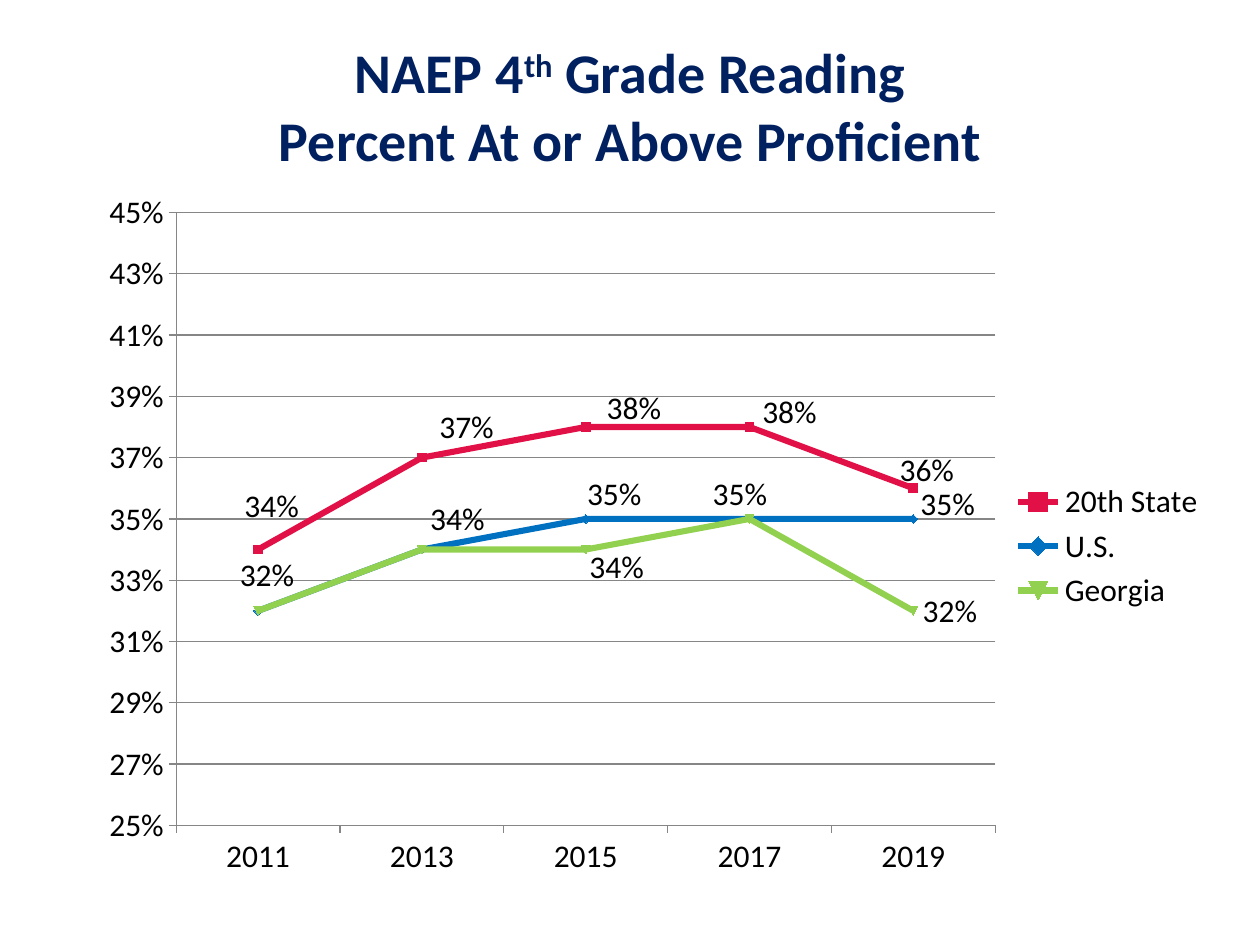
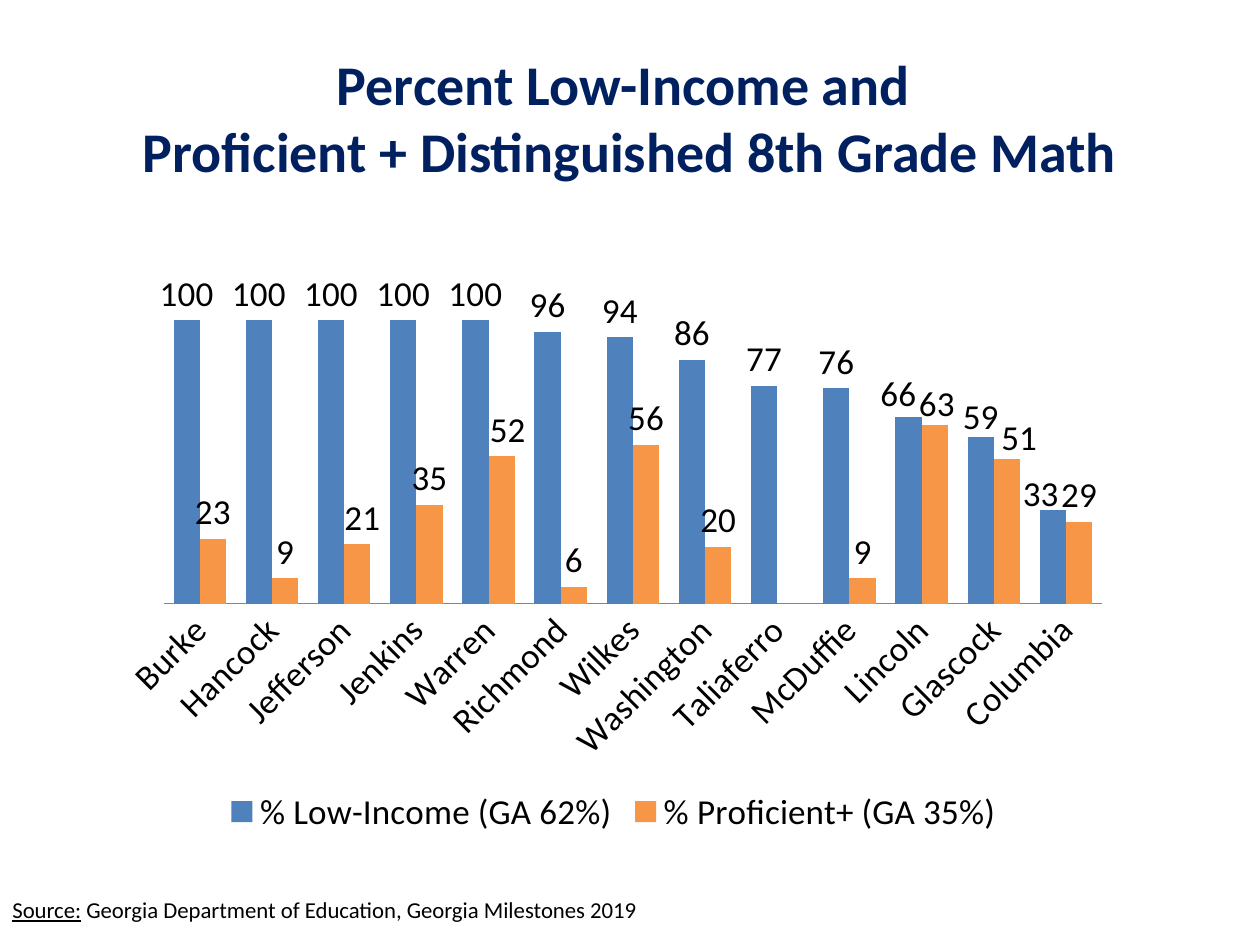
from lxml import etree
from pptx import Presentation
from pptx.chart.data import CategoryChartData
from pptx.dml.color import RGBColor
from pptx.enum.chart import (XL_CHART_TYPE, XL_LABEL_POSITION, XL_LEGEND_POSITION,
                             XL_MARKER_STYLE, XL_TICK_MARK)
from pptx.enum.text import MSO_ANCHOR, PP_ALIGN
from pptx.oxml.ns import qn
from pptx.util import Cm, Pt

NAVY = RGBColor(0x00, 0x20, 0x60)
BLACK = RGBColor(0x00, 0x00, 0x00)
GRAY = RGBColor(0x86, 0x86, 0x86)
CRIMSON = RGBColor(0xE1, 0x11, 0x48)
AZURE = RGBColor(0x00, 0x70, 0xC0)
LIME = RGBColor(0x92, 0xD0, 0x50)
BLUE = RGBColor(0x4F, 0x81, 0xBD)
ORANGE = RGBColor(0xF7, 0x96, 0x46)

LINE, COLUMN = XL_CHART_TYPE.LINE_MARKERS, XL_CHART_TYPE.COLUMN_CLUSTERED
RIGHT_OF_POINT, ABOVE_BAR = XL_LABEL_POSITION.RIGHT, XL_LABEL_POSITION.OUTSIDE_END
LEGEND_RIGHT, LEGEND_BOTTOM = XL_LEGEND_POSITION.RIGHT, XL_LEGEND_POSITION.BOTTOM
AUTO_MARKER = XL_MARKER_STYLE.AUTOMATIC
TICK_OUT, TICK_NONE = XL_TICK_MARK.OUTSIDE, XL_TICK_MARK.NONE
TOP, MIDDLE = MSO_ANCHOR.TOP, MSO_ANCHOR.MIDDLE
LEFT, CENTER = PP_ALIGN.LEFT, PP_ALIGN.CENTER

FONT = "Calibri"
TITLE = {"size": Pt(32), "bold": True, "name": FONT}
SOURCE = {"size": Pt(13), "name": FONT}
HIDDEN = "hidden"
BREAK = ("\n", {}, 0)


def add_text(slide, box, lines, style, color, align, anchor=TOP):
    """Each line is a list of (text, extra font values, baseline in percent)."""
    frame = slide.shapes.add_textbox(*map(Cm, box)).text_frame
    frame.word_wrap = True
    frame.vertical_anchor = anchor
    for number, line in enumerate(lines):
        paragraph = frame.paragraphs[0] if number == 0 else frame.add_paragraph()
        paragraph.alignment = align
        for part in line:
            if part == BREAK:
                paragraph.add_line_break()
                continue
            text, extra, baseline = part
            run = paragraph.add_run()
            run.text = text
            run.font.color.rgb = color
            for name, value in {**style, **extra}.items():
                setattr(run.font, name, value)
            if baseline:
                run._r.get_or_add_rPr().set("baseline", str(baseline * 1000))
    return frame


def add_layout(parent, index, **values):
    """Insert a manual chart layout; values are fractions of the chart."""
    for old in parent.findall(qn("c:layout")):
        parent.remove(old)
    layout = etree.Element(qn("c:layout"))
    parent.insert(index, layout)
    manual = etree.SubElement(layout, qn("c:manualLayout"))
    for name, value in values.items():
        etree.SubElement(manual, qn("c:" + name)).set("val", str(value))


prs = Presentation()
prs.slide_width, prs.slide_height = Cm(25.4), Cm(19.05)
blank = prs.slide_layouts[6]
reading_slide = prs.slides.add_slide(blank)
math_slide = prs.slides.add_slide(blank)

# Titles
add_text(reading_slide, (0.64, 0.64, 24.13, 3),
         [[("NAEP 4", {}, 0), ("th", {}, 30), (" Grade Reading", {}, 0)],
          [("Percent At or Above Proficient", {}, 0)]],
         TITLE, NAVY, CENTER)
add_text(math_slide, (1.27, 0.76, 22.86, 3.18),
         [[("Percent Low-Income and ", {}, 0), BREAK,
           ("Proficient + Distinguished 8th Grade Math", {}, 0)]],
         TITLE, NAVY, CENTER, MIDDLE)

# Source line
source = add_text(math_slide, (0, 18.13, 22.23, 0.64),
                  [[("Source:", {"underline": True}, 0),
                    (" Georgia Department of Education, Georgia Milestones 2019", {}, 0)]],
                  SOURCE, BLACK, LEFT)
source.paragraphs[0].line_spacing = 0.6

# Chart data: series are (name, colour, values, label shifts in percent by point)
reading = {
    "slide": reading_slide, "type": LINE, "box": (1.27, 3.81, 23.29, 14.4),
    "size": Pt(18), "format": "0%", "legend": LEGEND_RIGHT, "label": RIGHT_OF_POINT,
    "plot": {"x": 0.098, "y": 0.033, "w": 0.709, "h": 0.858},
    "categories": ["2011", "2013", "2015", "2017", "2019"],
    "series": [
        ("20th State", CRIMSON, (0.34, 0.37, 0.38, 0.38, 0.36),
         {0: (-2, -6), 1: (0.7, -4.2), 2: (1, -2.6), 3: (0.3, -2.1), 4: (-2, -2.5)}),
        ("U.S.", AZURE, (0.32, 0.34, 0.35, 0.35, 0.35),
         {0: (-2.4, -5), 1: (-0.1, -4.2), 2: (-0.7, -3.4), 3: (-4, -3.4), 4: (-0.2, -2)}),
        ("Georgia", LIME, (0.32, 0.34, 0.34, 0.35, 0.32),
         {0: HIDDEN, 1: HIDDEN, 2: (-0.5, 2.5), 3: HIDDEN}),
    ],
    "value_axis": {"minimum_scale": 0.25, "maximum_scale": 0.45, "major_unit": 0.02,
                   "has_major_gridlines": True, "major_tick_mark": TICK_OUT},
    "category_axis": {"major_tick_mark": TICK_OUT},
}
math_scores = {
    "slide": math_slide, "type": COLUMN, "box": (2.11, 5.08, 20.52, 11.86),
    "size": Pt(20), "format": "0", "legend": LEGEND_BOTTOM, "label": ABOVE_BAR,
    "plot": {"x": 0.058, "y": 0.02, "w": 0.922, "h": 0.578},
    "categories": ["Burke", "Hancock", "Jefferson", "Jenkins", "Warren", "Richmond", "Wilkes",
                   "Washington", "Taliaferro", "McDuffie", "Lincoln", "Glascock", "Columbia"],
    "series": [
        ("% Low-Income (GA 62%)", BLUE,
         (100, 100, 100, 100, 100, 96, 94, 86, 77, 76, 66, 59, 33),
         {10: (-1, 0.6), 11: (0, 1.2), 12: (-1.2, 1.7)}),
        ("% Proficient+ (GA 35%)", ORANGE,
         (23, 9, 21, 35, 52, 6, 56, 20, None, 9, 63, 51, 29),
         {2: (0.5, 0), 4: (0.6, 0), 10: (0.2, 1), 11: (1.2, 1)}),
    ],
    "value_axis": {"minimum_scale": 0, "maximum_scale": 120,
                   "has_major_gridlines": False, "visible": False},
    "category_axis": {"major_tick_mark": TICK_NONE},
}

# Charts
for content in (reading, math_scores):
    data = CategoryChartData(number_format=content["format"])
    data.categories = content["categories"]
    for name, _, values, _ in content["series"]:
        data.add_series(name, values)
    chart = content["slide"].shapes.add_chart(
        content["type"], *map(Cm, content["box"]), data).chart
    chart.has_title = False
    chart.font.name, chart.font.size = FONT, content["size"]
    chart.font.color.rgb = BLACK
    chart.has_legend = True
    chart.legend.position = content["legend"]
    chart.legend.include_in_layout = False
    add_layout(chart._chartSpace.chart.plotArea, 0, layoutTarget="inner",
               xMode="edge", yMode="edge", **content["plot"])

    # Axes
    for axis_name in ("value_axis", "category_axis"):
        axis = getattr(chart, axis_name)
        for name, value in content[axis_name].items():
            setattr(axis, name, value)
        axis.format.line.color.rgb = GRAY
    if chart.value_axis.has_major_gridlines:
        chart.value_axis.major_gridlines.format.line.color.rgb = GRAY
    chart.value_axis.tick_labels.number_format = content["format"]
    chart.value_axis.tick_labels.number_format_is_linked = False

    # Series and their labels
    plot = chart.plots[0]
    plot.vary_by_categories = False
    for series, (_, color, _, shifts) in zip(plot.series, content["series"]):
        if content["type"] == LINE:
            series.smooth = False
            series.format.line.width = Pt(3.5)
            series.format.line.color.rgb = color
            series.marker.style, series.marker.size = AUTO_MARKER, 5
            marker_format = series.marker.format
            marker_format.line.color.rgb = color
        else:
            marker_format = series.format
        marker_format.fill.solid()
        marker_format.fill.fore_color.rgb = color

        labels = series.data_labels
        for name, value in {"show_value": True, "position": content["label"],
                            "number_format": content["format"],
                            "number_format_is_linked": False}.items():
            setattr(labels, name, value)
        for point, shift in shifts.items():
            label = series.points[point].data_label
            label.position = content["label"]
            element = label._get_or_add_dLbl()
            if shift == HIDDEN:
                for child in element[1:]:
                    element.remove(child)
                etree.SubElement(element, qn("c:delete")).set("val", "1")
            else:
                add_layout(element, 1, x=shift[0] / 100, y=shift[1] / 100)

    # Shifted labels stand without leader lines
    for leader in chart._chartSpace.iter(qn("c:showLeaderLines")):
        leader.set("val", "0")

# Column spacing and slanted county names
columns = math_slide.shapes[-1].chart
columns.plots[0].gap_width = 75
columns.plots[0].overlap = 0
county_labels = columns.category_axis.tick_labels
county_labels.font.size = math_scores["size"]
columns.category_axis._element.find(qn("c:txPr")).find(qn("a:bodyPr")).set("rot", "-2700000")

prs.save("out.pptx")
